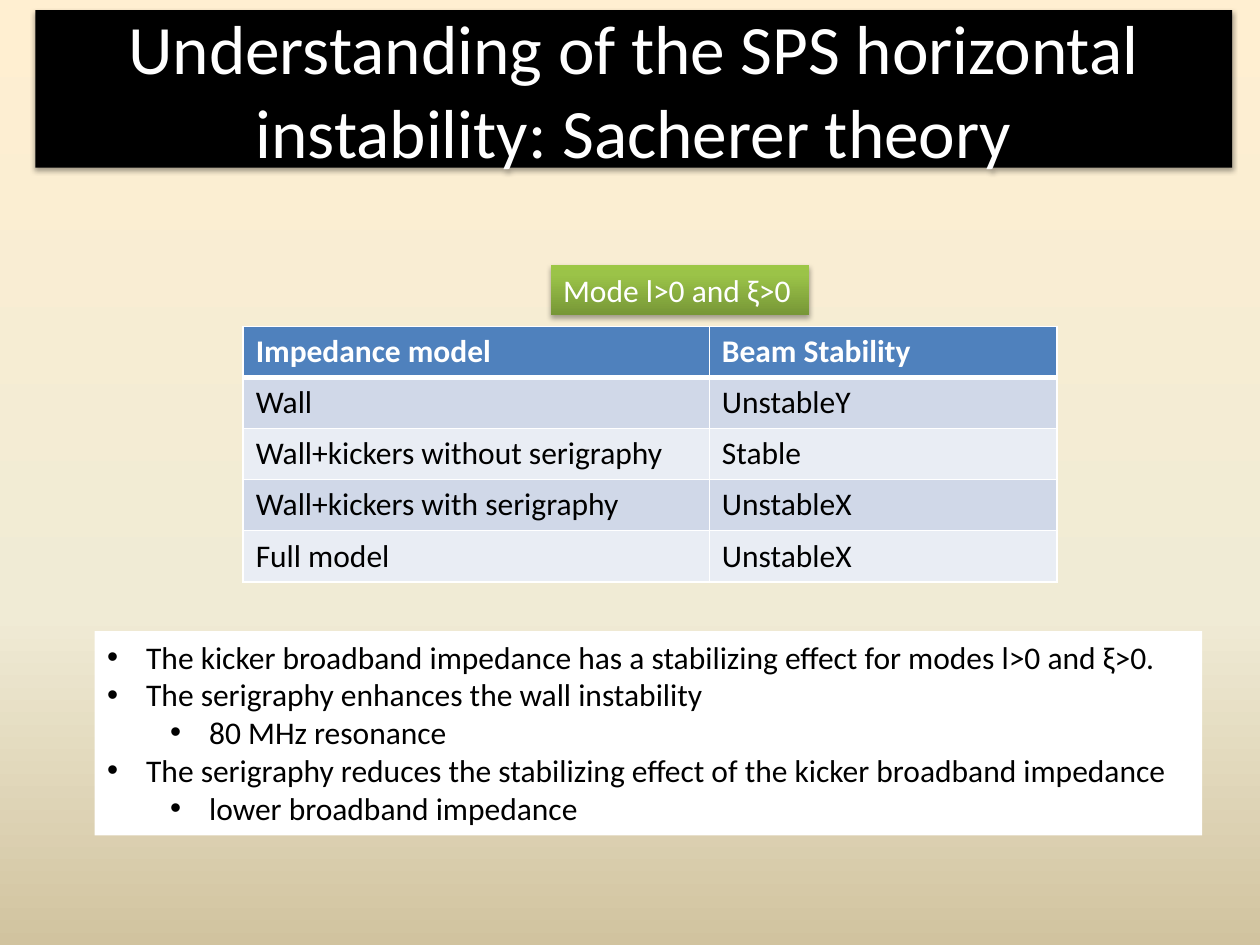
from lxml import etree
from pptx import Presentation
from pptx.dml.color import RGBColor
from pptx.enum.shapes import MSO_SHAPE as Shape
from pptx.enum.text import MSO_ANCHOR as Anchor, MSO_AUTO_SIZE as AutoSize, PP_ALIGN as Align
from pptx.oxml import parse_xml
from pptx.oxml.ns import nsdecls, qn
from pptx.util import Inches, Pt

FONT = "Calibri"
WIDTH, HEIGHT = 10, 7.5
ROW_HEIGHT = 0.405
COLUMN_WIDTHS = (3.7, 2.76)

STABILITY = [
    ("Impedance model", "Beam Stability"),
    ("Wall", "UnstableY"),
    ("Wall+kickers without serigraphy", "Stable"),
    ("Wall+kickers with serigraphy", "UnstableX"),
    ("Full model", "UnstableX"),
]
CONCLUSIONS = [
    (0, "The kicker broadband impedance has a stabilizing effect for modes l>0 and ξ>0."),
    (0, "The serigraphy enhances the wall instability"),
    (1, "80 MHz resonance"),
    (0, "The serigraphy reduces the stabilizing effect of the kicker broadband impedance"),
    (1, "lower broadband impedance"),
]


def color(value):
    return RGBColor.from_string(value)


def place(box, left, top, width, height):
    box.left, box.top = Inches(left), Inches(top)
    box.width, box.height = Inches(width), Inches(height)


def add_span(para, text, size, ink, bold=False):
    span = para.add_run()
    span.text = text
    span.font.name, span.font.size, span.font.bold = FONT, Pt(size), bold
    span.font.color.rgb = color(ink)


def set_gradient(properties, stops, angle):
    """Swap the solid fill of an element for a linear gradient."""
    marks = "".join(f'<a:gs pos="{share * 1000}"><a:srgbClr val="{value}"/></a:gs>'
                    for share, value in stops)
    gradient = parse_xml(f'<a:gradFill {nsdecls("a")} rotWithShape="1"><a:gsLst>{marks}</a:gsLst>'
                         f'<a:lin ang="{angle * 60000}" scaled="0"/></a:gradFill>')
    properties.replace(properties.find(qn("a:solidFill")), gradient)


def add_shadow(box):
    box._element.spPr.append(parse_xml(
        f'<a:effectLst {nsdecls("a")}><a:outerShdw blurRad="{Pt(3.1)}" dist="{Pt(1.8)}" '
        'dir="5400000" rotWithShape="0"><a:srgbClr val="000000"><a:alpha val="35000"/>'
        '</a:srgbClr></a:outerShdw></a:effectLst>'))


def set_borders(cell, **widths):
    """Draw white cell borders, which must stand before the fill."""
    properties = cell._tc.get_or_add_tcPr()
    for index, side in enumerate("LRTB"):
        properties.insert(index, parse_xml(
            f'<a:ln{side} {nsdecls("a")} w="{Pt(widths.get(side, 1))}"><a:solidFill>'
            f'<a:srgbClr val="FFFFFF"/></a:solidFill></a:ln{side}>'))


def set_bullet(para, left, hanging):
    properties = para._p.get_or_add_pPr()
    properties.set("marL", str(Inches(left)))
    properties.set("indent", str(-Inches(hanging)))
    etree.SubElement(properties, qn("a:buFont")).set("typeface", "Arial")
    etree.SubElement(properties, qn("a:buChar")).set("char", "•")


def add_title(page, text):
    box = page.shapes.title
    place(box, 0.28, 0.08, 0.95 * WIDTH, HEIGHT / 6)
    box.fill.solid()
    box.fill.fore_color.rgb = color("000000")
    add_shadow(box)
    frame = box.text_frame
    frame.auto_size, frame.vertical_anchor = AutoSize.NONE, Anchor.MIDDLE
    frame.paragraphs[0].alignment = Align.CENTER
    add_span(frame.paragraphs[0], text, 39.6, "FFFFFF")


def add_label(page, text):
    box = page.shapes.add_shape(Shape.RECTANGLE, 0, 0, 0, 0)
    place(box, 4.37, 2.1, 2.05, 0.4)
    box.line.fill.background()
    box.fill.solid()
    set_gradient(box._element.spPr, [(0, "779737"), (80, "9BC348"), (100, "9DC746")], 270)
    add_shadow(box)
    frame = box.text_frame
    frame.word_wrap, frame.vertical_anchor = False, Anchor.TOP
    frame.paragraphs[0].alignment = Align.LEFT
    add_span(frame.paragraphs[0], text, 18, "FFFFFF")


def add_stability_table(page, rows):
    table = page.shapes.add_table(
        len(rows), len(COLUMN_WIDTHS), Inches(1.93), Inches(2.59),
        Inches(sum(COLUMN_WIDTHS)), Inches(ROW_HEIGHT * len(rows))).table
    for column, width in zip(table.columns, COLUMN_WIDTHS):
        column.width = Inches(width)
    for row, texts in enumerate(rows):
        header = row == 0
        band = "4F81BD" if header else "D0D8E8" if row % 2 else "E9EDF4"
        for column, text in enumerate(texts):
            cell = table.cell(row, column)
            cell.fill.solid()
            cell.fill.fore_color.rgb = color(band)
            set_borders(cell, T=3 if row == 1 else 1, B=3 if header else 1)
            add_span(cell.text_frame.paragraphs[0], text, 18,
                     "FFFFFF" if header else "000000", header)


def add_conclusions(page, items):
    box = page.placeholders[1]
    place(box, 0.75, 5.01, 8.79, 1.62)
    box.fill.solid()
    box.fill.fore_color.rgb = color("FFFFFF")
    frame = box.text_frame
    frame.auto_size = AutoSize.NONE
    for index, (level, text) in enumerate(items):
        para = frame.add_paragraph() if index else frame.paragraphs[0]
        para.level = level
        para.space_before = Pt(0)
        set_bullet(para, 0.31 + 0.5 * level, 0.31)
        add_span(para, text, 18, "000000")


def main():
    deck = Presentation()
    deck.slide_width, deck.slide_height = Inches(WIDTH), Inches(HEIGHT)
    page = deck.slides.add_slide(deck.slide_layouts[1])

    # Background
    page.background.fill.solid()
    set_gradient(page.element.find(".//" + qn("p:bgPr")),
                 [(0, "FFEFD1"), (65, "F0EBD5"), (100, "D1C39F")], 90)

    # Heading, table with its label, and conclusions
    add_title(page, "Understanding of the SPS horizontal instability: Sacherer theory")
    add_stability_table(page, STABILITY)
    add_label(page, "Mode l>0 and ξ>0")
    add_conclusions(page, CONCLUSIONS)
    deck.save("out.pptx")


if __name__ == "__main__":
    main()
